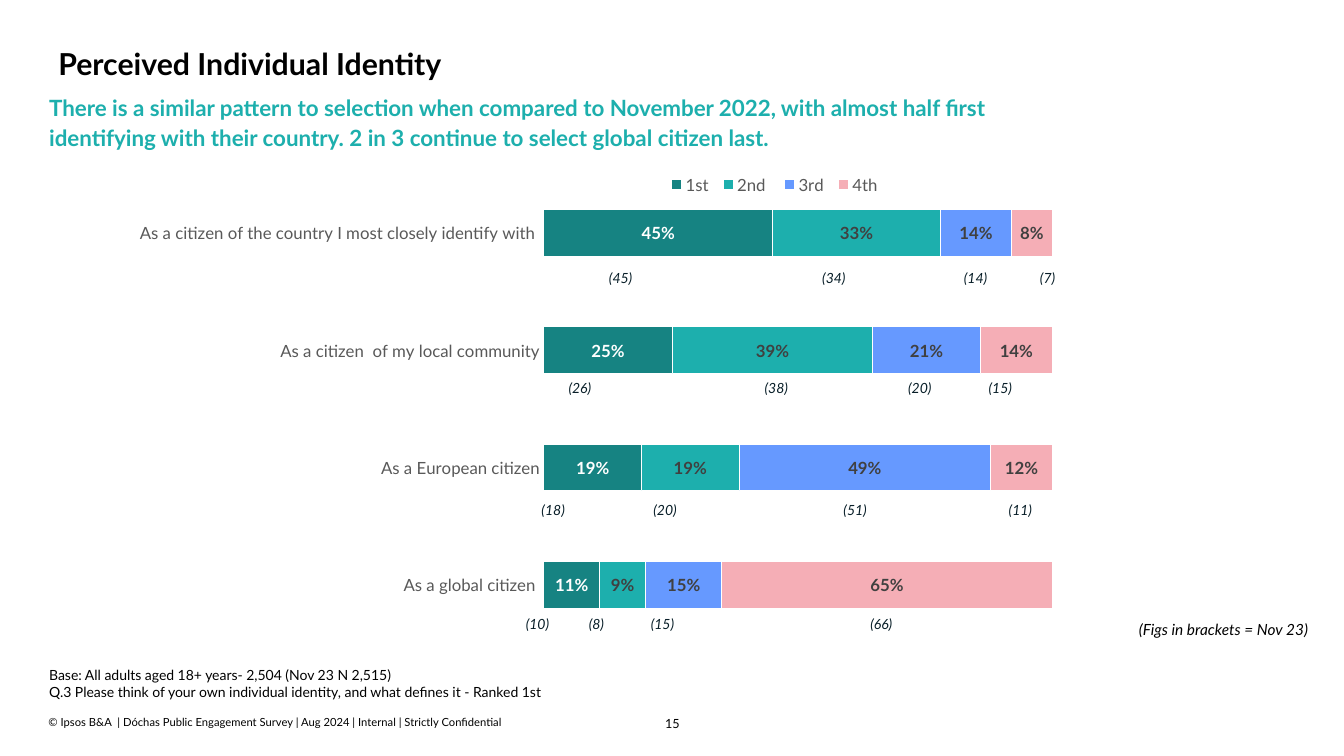
import pptx
import pptx.chart.data
import pptx.dml.color
import pptx.enum.chart
import pptx.enum.text
import pptx.oxml
import pptx.oxml.ns
import pptx.util

Cm = pptx.util.Cm
Pt = pptx.util.Pt
RGBColor = pptx.dml.color.RGBColor
Align = pptx.enum.text.PP_ALIGN
Anchor = pptx.enum.text.MSO_ANCHOR

BLACK = RGBColor(0x00, 0x00, 0x00)
WHITE = RGBColor(0xFF, 0xFF, 0xFF)
INK = RGBColor(0x08, 0x1E, 0x28)
GREY = RGBColor(0x59, 0x59, 0x59)
DARK_GREY = RGBColor(0x40, 0x40, 0x40)
DEEP_TEAL = RGBColor(0x16, 0x83, 0x82)
TEAL = RGBColor(0x1D, 0xAF, 0xAD)
BLUE = RGBColor(0x66, 0x99, 0xFF)
PINK = RGBColor(0xF5, 0xAE, 0xB6)

CATEGORIES = [
    "As a citizen of the country I most closely identify with ",
    "As a citizen  of my local community",
    "As a European citizen",
    "As a global citizen ",
]
# name, values, bar colour, label colour
RANKS = [
    ("1st", (45, 25, 19, 11), DEEP_TEAL, WHITE),
    ("2nd ", (33, 39, 19, 9), TEAL, DARK_GREY),
    ("3rd", (14, 21, 49, 15), BLUE, DARK_GREY),
    ("4th ", (8, 14, 12, 65), PINK, DARK_GREY),
]
# left, top, column widths, figures of the previous wave
PREVIOUS_WAVE = [
    (12.78, 6.76, (5.72, 5.03, 2.11, 1.52), (45, 34, 14, 7)),
    (12.19, 9.53, (4.85, 5.05, 2.18, 1.88), (26, 38, 20, 15)),
    (12.67, 12.6, (2.54, 3.1, 6.48, 1.85), (18, 20, 51, 11)),
    (12.67, 15.49, (1.75, 1.22, 2.11, 8.92), (10, 8, 15, 66)),
]


class SlideBuilder:
    font_name = "Lato"
    row_height = 0.45

    def __init__(self, presentation):
        self.slide = presentation.slides.add_slide(presentation.slide_layouts[6])

    def style_font(self, font, size, color, bold=False, italic=False):
        font.name = self.font_name
        font.size = Pt(size)
        font.color.rgb = color
        font.bold = bold
        font.italic = italic

    def add_run(self, paragraph, text, *style, **emphasis):
        run = paragraph.add_run()
        run.text = text
        self.style_font(run.font, *style, **emphasis)

    def add_text(self, box, lines, size, color=BLACK, align=Align.LEFT, anchor=Anchor.TOP,
                 insets=(0, 0, 0, 0), spacing=1.0, wrap=True, **emphasis):
        """Insets run left, top, right, bottom in centimetres."""
        shape = self.slide.shapes.add_textbox(*map(Cm, box))
        frame = shape.text_frame
        frame.word_wrap = wrap
        frame.vertical_anchor = anchor
        (frame.margin_left, frame.margin_top,
         frame.margin_right, frame.margin_bottom) = map(Cm, insets)
        for index, line in enumerate(lines):
            paragraph = frame.add_paragraph() if index else frame.paragraphs[0]
            paragraph.alignment = align
            paragraph.line_spacing = spacing
            self.add_run(paragraph, line, size, color, **emphasis)

    def add_figures(self, left, top, widths, figures, anchor):
        """Add a one-row table of bracketed figures under a bar."""
        frame = self.slide.shapes.add_table(
            1, len(widths), Cm(left), Cm(top), Cm(sum(widths)), Cm(self.row_height))
        table = frame.table
        table.first_row = False
        table.horz_banding = False
        for column, width, cell, figure in zip(
                table.columns, widths, table.rows[0].cells, figures):
            column.width = Cm(width)
            cell.fill.background()
            cell.vertical_anchor = anchor
            cell.margin_left = cell.margin_top = cell.margin_right = Cm(0.03)
            cell.margin_bottom = 0
            paragraph = cell.text_frame.paragraphs[0]
            paragraph.alignment = Align.CENTER
            self.add_run(paragraph, f"({figure})", 10, INK, italic=True)

    def add_ranking_chart(self, box):
        data = pptx.chart.data.CategoryChartData(number_format="0")
        data.categories = CATEGORIES
        for name, values, _, _ in RANKS:
            data.add_series(name, values)
        chart = self.slide.shapes.add_chart(
            pptx.enum.chart.XL_CHART_TYPE.BAR_STACKED_100, *map(Cm, box), data).chart
        chart.has_title = False
        self.style_font(chart.font, 10, BLACK)

        axis = chart.category_axis
        axis.reverse_order = True
        axis.major_tick_mark = pptx.enum.chart.XL_TICK_MARK.NONE
        axis.format.line.fill.background()
        self.style_font(axis.tick_labels.font, 12, GREY)
        chart.value_axis.has_major_gridlines = False
        chart.value_axis.visible = False

        plot = chart.plots[0]
        plot.gap_width = 150
        plot.overlap = 100
        plot.vary_by_categories = False
        for series, (_, _, bar_color, label_color) in zip(plot.series, RANKS):
            series.format.fill.solid()
            series.format.fill.fore_color.rgb = bar_color
            series.format.line.color.rgb = WHITE
            series.format.line.width = Pt(0.75)
            labels = series.data_labels
            labels.show_value = True
            labels.number_format = '#"%"'
            labels.number_format_is_linked = False
            labels.position = pptx.enum.chart.XL_LABEL_POSITION.CENTER
            self.style_font(labels.font, 12, label_color, bold=True)

        chart.has_legend = True
        legend = chart.legend
        legend.position = pptx.enum.chart.XL_LEGEND_POSITION.TOP
        legend.include_in_layout = False
        self.style_font(legend.font, 12, GREY)

        plot_area = plot._element.getparent()
        self.place(plot_area, (0.445, 0.09, 0.535, 0.89), inner=True)
        self.place(legend._element, (0.57, 0.08, 0.24, 0.06))

    @staticmethod
    def place(element, fractions, inner=False):
        """Fix a chart part at x, y, w, h given as fractions of the chart."""
        target = '<c:layoutTarget val="inner"/>' if inner else ""
        modes = "".join(f'<c:{side}Mode val="edge"/>' for side in "xy")
        sizes = "".join(f'<c:{side} val="{value}"/>' for side, value in zip("xywh", fractions))
        layout = pptx.oxml.parse_xml(
            f'<c:layout {pptx.oxml.ns.nsdecls("c")}><c:manualLayout>'
            f"{target}{modes}{sizes}</c:manualLayout></c:layout>")
        for old in element.findall(pptx.oxml.ns.qn("c:layout")):
            element.remove(old)
        position = element.find(pptx.oxml.ns.qn("c:legendPos"))
        element.insert(0 if position is None else element.index(position) + 1, layout)


def main():
    presentation = pptx.Presentation()
    presentation.slide_width = Cm(33.87)
    presentation.slide_height = Cm(19.05)
    builder = SlideBuilder(presentation)

    builder.add_text((16.26, 18.01, 1.37, 0.38), ["15"], 9, align=Align.CENTER, spacing=1.1)
    builder.add_text(
        (1.22, 18.03, 15.49, 0.33),
        ["© Ipsos B&A  | Dóchas Public Engagement Survey | Aug 2024 | Internal | "
         "Strictly Confidential"], 8, anchor=Anchor.BOTTOM)
    builder.add_text(
        (1.22, 0.33, 31.34, 1.98), ["Perceived Individual Identity"], 21.6,
        anchor=Anchor.BOTTOM, insets=(0.25, 0.13, 0.25, 0.25), spacing=0.9, bold=True)
    builder.add_text(
        (1.24, 2.31, 25.96, 2.46),
        ["There is a similar pattern to selection when compared to November 2022, with almost "
         "half first identifying with their country. 2 in 3 continue to select global citizen "
         "last."], 16, TEAL, spacing=1.1, bold=True)
    builder.add_text(
        (1.24, 16.79, 25.96, 0.86),
        ["Base: All adults aged 18+ years- 2,504 (Nov 23 N 2,515)",
         "Q.3 Please think of your own individual identity, and what defines it - Ranked 1st"],
        10)
    builder.add_ranking_chart((3.05, 3.2, 23.95, 13.28))
    for index, figures_row in enumerate(PREVIOUS_WAVE):
        builder.add_figures(*figures_row, anchor=Anchor.MIDDLE if index else Anchor.TOP)
    builder.add_text(
        (28.45, 15.49, 5.21, 0.74), ["(Figs in brackets = Nov 23)"], 11,
        insets=(0.25, 0.13, 0.25, 0.13), wrap=False, italic=True)

    presentation.save("out.pptx")


if __name__ == "__main__":
    main()
